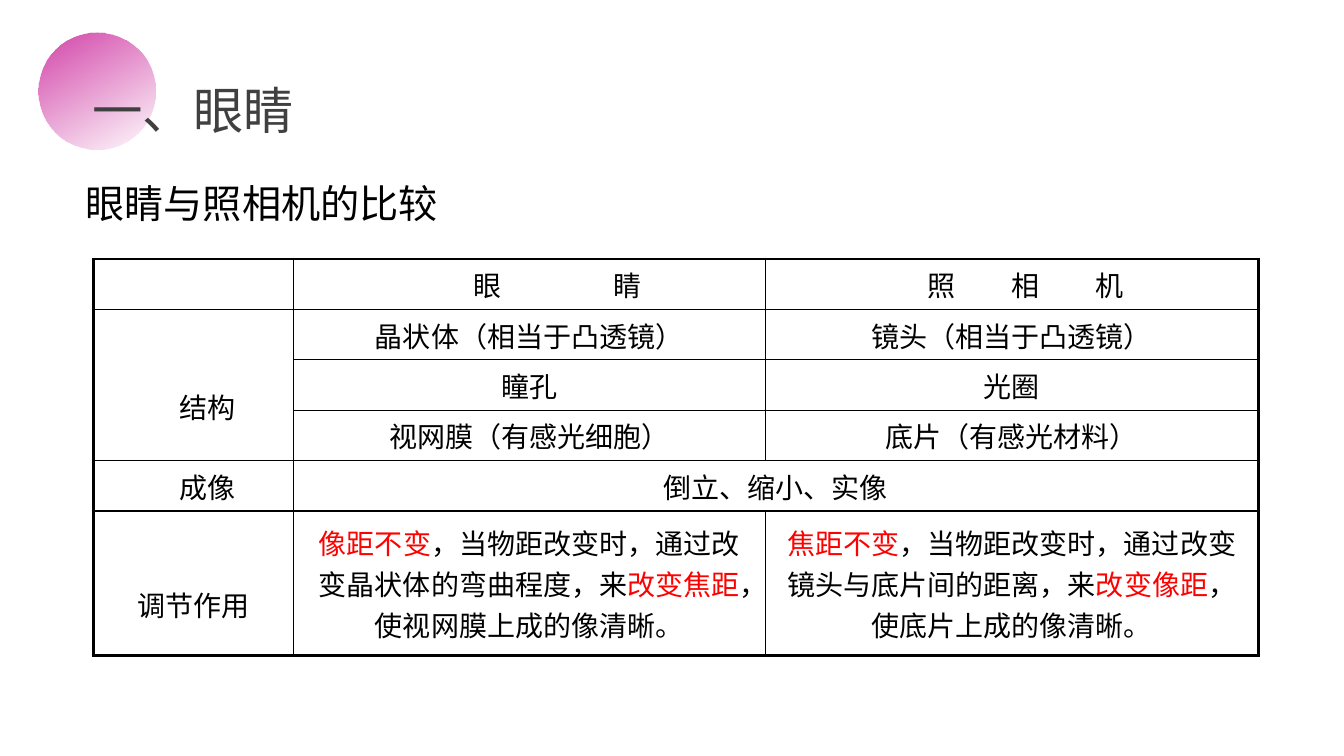
"""Build a slide that compares the eye with a camera."""
from lxml.etree import SubElement
from pptx import Presentation
from pptx.dml.color import RGBColor
from pptx.enum.shapes import MSO_SHAPE
from pptx.enum.text import MSO_ANCHOR, PP_ALIGN
from pptx.oxml.ns import qn
from pptx.util import Inches, Pt

BLACK, RED, GREY, PINK = "000000", "FF0000", "404040", "D343A9"
COLUMN_WIDTHS = [1.98, 4.68, 4.89]
ROW_HEIGHTS = [0.5] * 5 + [1.43]
MERGES = [(1, 0, 3, 0), (4, 1, 4, 2)]
HEADINGS = [(1, "眼睛", 80, 0.56), (2, "照相机", 40, 0.28)]
LABELS = [(1, "结构", 0.28, 0.47), (4, "成像", 0.28, 0.05), (5, "调节作用", 0, 0.47)]
CONTENTS = [
    (1, 1, "晶状体（相当于凸透镜）"),
    (1, 2, "镜头（相当于凸透镜）"),
    (2, 1, "瞳孔"),
    (2, 2, "光圈"),
    (3, 1, "视网膜（有感光细胞）"),
    (3, 2, "底片（有感光材料）"),
    (4, 1, "倒立、缩小、实像"),
    (5, 1, "*像距不变*，当物距改变时，通过改变晶状体的弯曲程度，来*改变焦距*，使视网膜上成的像清晰。"),
    (5, 2, "*焦距不变*，当物距改变时，通过改变镜头与底片间的距离，来*改变像距*，使底片上成的像清晰。"),
]


def color(value):
    """Turn a hex string into a colour."""
    return RGBColor.from_string(value)


def style_paragraph(paragraph, size, font_color, alignment):
    """Set the font and alignment of a paragraph."""
    paragraph.alignment = alignment
    paragraph.font.name = "Arial"
    paragraph.font.size = Pt(size)
    paragraph.font.color.rgb = color(font_color)


def add_gradient_circle(slide):
    """Add the circle that fades to transparent."""
    circle = slide.shapes.add_shape(
        MSO_SHAPE.OVAL, Inches(0.38), Inches(0.32), Inches(1.16), Inches(1.16))
    circle.shadow.inherit = False
    circle.line.fill.background()
    circle.fill.gradient()
    circle.fill.gradient_angle = 300
    for stop in circle.fill.gradient_stops:
        stop.color.rgb = color(PINK)
    last_color = list(circle._element.spPr.iter(qn("a:srgbClr")))[-1]
    SubElement(last_color, qn("a:alpha"), val="0")


def add_text(slide, text, box, size, font_color, alignment, anchor):
    """Add a one-line text box."""
    shape = slide.shapes.add_textbox(*(Inches(length) for length in box))
    frame = shape.text_frame
    frame.word_wrap = True
    frame.vertical_anchor = anchor
    frame.text = text
    style_paragraph(frame.paragraphs[0], size, font_color, alignment)


def set_borders(cell, widths):
    """Draw the left, right, top and bottom borders of a cell."""
    properties = cell._tc.get_or_add_tcPr()
    for side, width in zip("LRTB", widths):
        line = SubElement(properties, qn(f"a:ln{side}"), w=str(Pt(width)))
        fill = SubElement(line, qn("a:solidFill"))
        SubElement(fill, qn("a:srgbClr"), val=BLACK)


def format_cell(cell, row, column):
    """Set the borders, fill, margins and font of a cell."""
    bottom = row + (cell.span_height if cell.is_merge_origin else 1)
    right = column + (cell.span_width if cell.is_merge_origin else 1)
    outer = [column == 0, right == len(COLUMN_WIDTHS), row == 0, bottom == len(ROW_HEIGHTS)]
    set_borders(cell, [2.25 if edge else 1 for edge in outer])
    cell.fill.background()
    cell.vertical_anchor = MSO_ANCHOR.MIDDLE
    cell.margin_left = cell.margin_right = Inches(0.13)
    cell.margin_top = cell.margin_bottom = Inches(0.05)
    style_paragraph(cell.text_frame.paragraphs[0], 20, BLACK, PP_ALIGN.CENTER)


def indent(paragraph, length):
    """Indent a paragraph from the left."""
    paragraph._p.get_or_add_pPr().set("marL", str(Inches(length)))


def write_heading(cell, text, spacing, left):
    """Write a heading with wide gaps between its characters."""
    paragraph = cell.text_frame.paragraphs[0]
    indent(paragraph, left)
    spaced = paragraph.add_run()
    spaced.text = text[:-1]
    spaced._r.get_or_add_rPr().set("spc", str(spacing * 100))
    paragraph.add_run().text = text[-1]


def write_label(cell, text, left, top):
    """Write a row label, shifted within its cell."""
    paragraph = cell.text_frame.paragraphs[0]
    indent(paragraph, left)
    cell.margin_top = Inches(top)
    paragraph.add_run().text = text


def write_content(cell, text):
    """Write text whose starred parts are red."""
    paragraph = cell.text_frame.paragraphs[0]
    for index, part in enumerate(text.split("*")):
        if part:
            run = paragraph.add_run()
            run.text = part
            if index % 2:
                run.font.color.rgb = color(RED)


def add_comparison_table(slide):
    """Add the table that compares eye and camera."""
    frame = slide.shapes.add_table(
        len(ROW_HEIGHTS), len(COLUMN_WIDTHS), Inches(0.93), Inches(2.57),
        Inches(sum(COLUMN_WIDTHS)), Inches(sum(ROW_HEIGHTS)))
    table = frame.table
    table.first_row = table.horz_banding = False
    for column, width in zip(table.columns, COLUMN_WIDTHS):
        column.width = Inches(width)
    for row, height in zip(table.rows, ROW_HEIGHTS):
        row.height = Inches(height)
    for top, left, bottom, right in MERGES:
        table.cell(top, left).merge(table.cell(bottom, right))
    for row in range(len(ROW_HEIGHTS)):
        for column in range(len(COLUMN_WIDTHS)):
            format_cell(table.cell(row, column), row, column)
    for column, text, spacing, left in HEADINGS:
        write_heading(table.cell(0, column), text, spacing, left)
    for row, text, left, top in LABELS:
        write_label(table.cell(row, 0), text, left, top)
    for row, column, text in CONTENTS:
        write_content(table.cell(row, column), text)


def main():
    """Build and save the presentation."""
    presentation = Presentation()
    presentation.slide_width = Inches(13.33)
    presentation.slide_height = Inches(7.5)
    slide = presentation.slides.add_slide(presentation.slide_layouts[6])
    add_gradient_circle(slide)
    add_text(slide, "眼睛与照相机的比较", (-0.44, 1.67, 6.07, 0.69), 28, BLACK,
             PP_ALIGN.CENTER, MSO_ANCHOR.MIDDLE)
    add_comparison_table(slide)
    add_text(slide, "一、眼睛", (0.82, 0.74, 2.37, 0.71), 36, GREY,
             PP_ALIGN.LEFT, MSO_ANCHOR.TOP)
    presentation.save("out.pptx")


if __name__ == "__main__":
    main()
